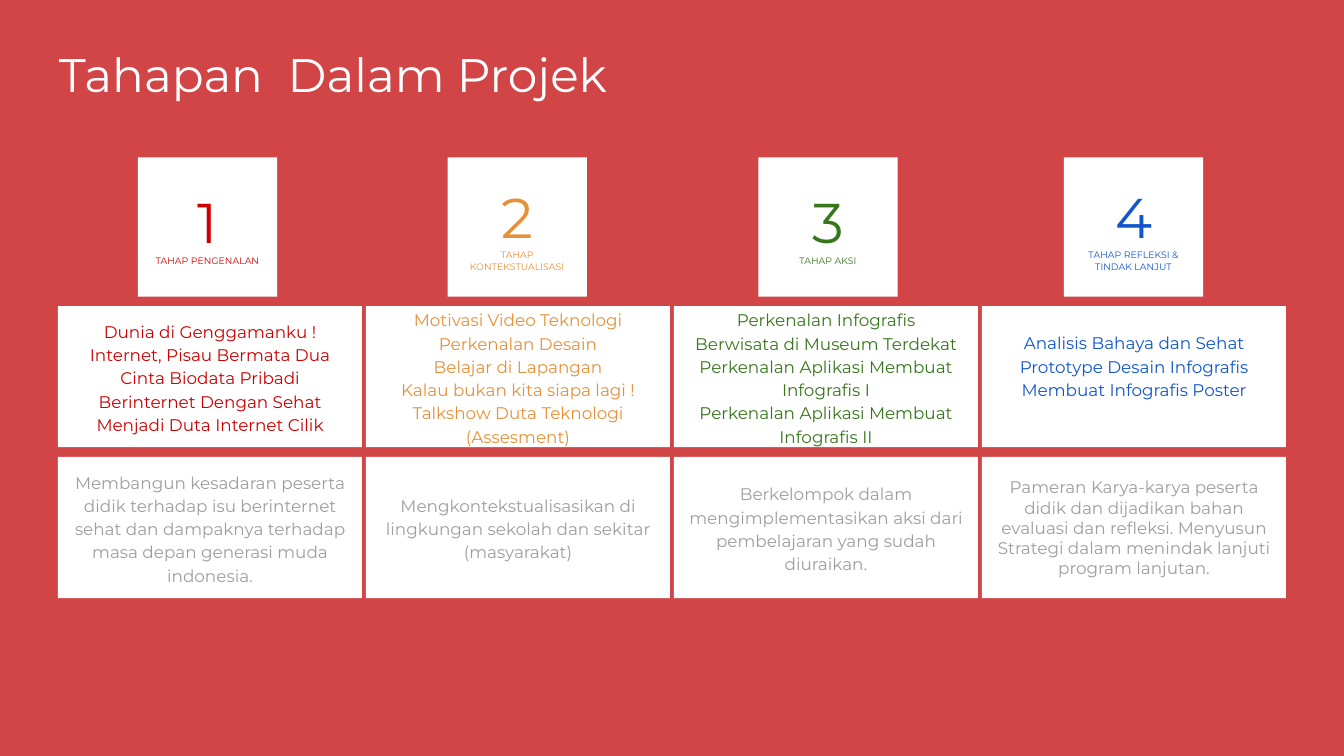
from pptx import Presentation
from pptx.dml.color import RGBColor
from pptx.enum.shapes import MSO_SHAPE
from pptx.enum.text import MSO_ANCHOR, PP_ALIGN
from pptx.util import Pt

RECT = MSO_SHAPE.RECTANGLE
MIDDLE = MSO_ANCHOR.MIDDLE
CENTER = PP_ALIGN.CENTER

BACK = RGBColor(0xD2, 0x45, 0x47)
WHITE = RGBColor(0xFF, 0xFF, 0xFF)
GRAY = RGBColor(0x9E, 0x9E, 0x9E)
RED = RGBColor(0xCC, 0x00, 0x00)
ORANGE = RGBColor(0xE6, 0x91, 0x38)
GREEN = RGBColor(0x38, 0x76, 0x1D)
BLUE = RGBColor(0x11, 0x55, 0xCC)

LEFT, PITCH = 31, 165
CARD_W, CARD_H = 162.9, 75.6
LIST_TOP, GOAL_TOP = 164, 244.8
TILE_TOP, TILE = 84.4, 74.6
LOOSE = 1.15

# color, tile left, stage name, topics, space kept below topics, goal, goal spacing
STAGES = [
    (RED, 73.9, "TAHAP PENGENALAN",
     ["Dunia di Genggamanku !", "Internet, Pisau Bermata Dua",
      "Cinta Biodata Pribadi", "Berinternet Dengan Sehat",
      "Menjadi Duta Internet Cilik"], 0,
     "Membangun kesadaran peserta didik terhadap isu berinternet sehat dan "
     "dampaknya terhadap masa depan generasi muda indonesia.", LOOSE),
    (ORANGE, 239.8, "TAHAP KONTEKSTUALISASI",
     ["Motivasi Video Teknologi", "Perkenalan Desain", "Belajar di Lapangan",
      "Kalau bukan kita siapa lagi !",
      "Talkshow Duta Teknologi (Assesment)"], 0,
     "Mengkontekstualisasikan di lingkungan sekolah dan sekitar (masyarakat)",
     LOOSE),
    (GREEN, 406.3, "TAHAP AKSI",
     ["Perkenalan Infografis", "Berwisata di Museum Terdekat",
      "Perkenalan Aplikasi Membuat Infografis I",
      "Perkenalan Aplikasi Membuat Infografis II"], 0,
     "Berkelompok dalam mengimplementasikan aksi dari pembelajaran yang "
     "sudah diuraikan.", LOOSE),
    (BLUE, 570, "TAHAP REFLEKSI & TINDAK LANJUT",
     ["Analisis Bahaya dan Sehat", "Prototype Desain Infografis",
      "Membuat Infografis Poster"], 12.6,
     "Pameran Karya-karya peserta didik dan dijadikan bahan evaluasi dan "
     "refleksi. Menyusun Strategi dalam menindak lanjuti program lanjutan.", 1),
]


class Deck:
    font = "Montserrat"
    inset = 7.2

    def __init__(self, show):
        self.slide = show.slides.add_slide(show.slide_layouts[6])
        fill = self.slide.background.fill
        fill.solid()
        fill.fore_color.rgb = BACK

    def label(self, frame, lines, sizes, color, below=0):
        """Fill a frame with one paragraph per line, each in its own size."""
        frame.word_wrap = True
        frame.margin_left = frame.margin_right = Pt(self.inset)
        frame.margin_top = Pt(self.inset)
        frame.margin_bottom = Pt(self.inset + below)
        frame.text = "\n".join(lines)
        for para, size in zip(frame.paragraphs, sizes):
            for run in para.runs:
                run.font.name = self.font
                run.font.size = Pt(size)
                run.font.color.rgb = color

    def title(self, text, x, y, w, h):
        box = self.slide.shapes.add_textbox(Pt(x), Pt(y), Pt(w), Pt(h))
        self.label(box.text_frame, [text], [25.2], WHITE)

    def card(self, x, y, w, h, lines, sizes, color, space=1, below=0):
        box = self.slide.shapes.add_shape(RECT, Pt(x), Pt(y), Pt(w), Pt(h))
        box.shadow.inherit = False
        box.fill.solid()
        box.fill.fore_color.rgb = WHITE
        box.line.fill.background()
        frame = box.text_frame
        self.label(frame, lines, sizes, color, below)
        frame.vertical_anchor = MIDDLE
        for para in frame.paragraphs:
            para.alignment = CENTER
            para.line_spacing = space


def main():
    show = Presentation()
    show.slide_width, show.slide_height = Pt(720), Pt(405)
    deck = Deck(show)
    deck.title("Tahapan  Dalam Projek", 24.5, 17.3, 354, 45.4)
    for i, (color, left, name, topics, below, goal, space) in enumerate(STAGES):
        x = LEFT + i * PITCH
        deck.card(left, TILE_TOP, TILE, TILE, [str(i + 1), name], [30, 5], color)
        deck.card(x, LIST_TOP, CARD_W, CARD_H, topics, [9] * len(topics),
                  color, LOOSE, below)
        deck.card(x, GOAL_TOP, CARD_W, CARD_H, [goal], [9], GRAY, space)
    show.save("out.pptx")


if __name__ == "__main__":
    main()
